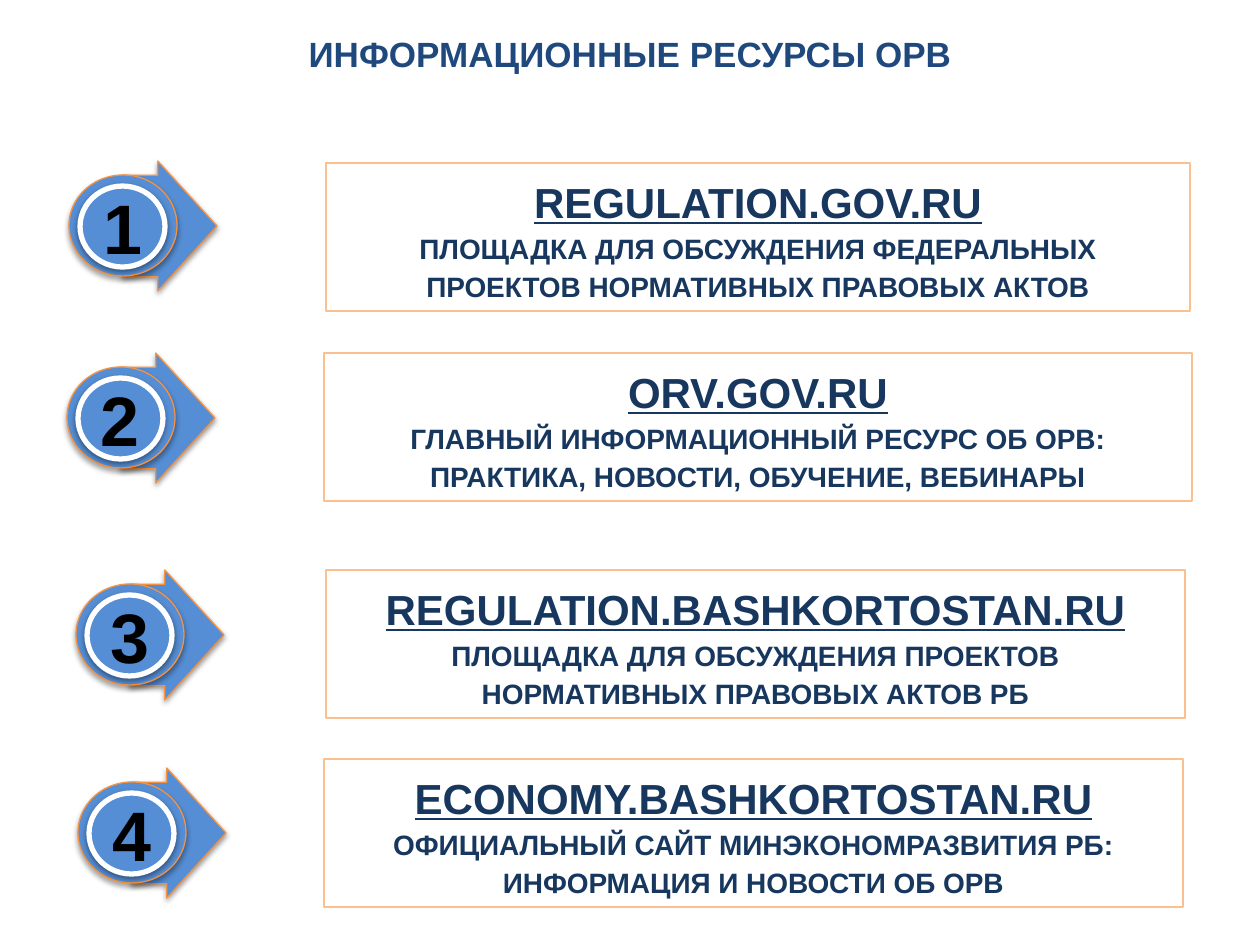
from lxml import etree
from pptx import Presentation
from pptx.dml.color import RGBColor
from pptx.enum.shapes import MSO_SHAPE
from pptx.enum.text import MSO_ANCHOR, MSO_AUTO_SIZE, PP_ALIGN
from pptx.oxml.ns import qn
from pptx.util import Pt

PX = 914400 / 126
ARROW = MSO_SHAPE.RIGHT_ARROW
CIRCLE = MSO_SHAPE.FLOWCHART_CONNECTOR
RECTANGLE = MSO_SHAPE.RECTANGLE
CENTER = PP_ALIGN.CENTER
BLUE, ORANGE, PEACH, WHITE, NAVY = "558ED5", "F69240", "FAC090", "FFFFFF", "17375E"


def color(value):
    return RGBColor.from_string(value)


def add_badge_part(group, kind, box, line_color, line_width, alpha, distance):
    shape = group.shapes.add_shape(kind, *(round(v * PX) for v in box))
    shape.fill.solid()
    shape.fill.fore_color.rgb = color(BLUE)
    shape.line.color.rgb = color(line_color)
    shape.line.width = Pt(line_width)
    # Soft shadow falling straight down
    effects = etree.SubElement(shape._element.spPr, qn("a:effectLst"))
    shadow = etree.SubElement(effects, qn("a:outerShdw"), blurRad=str(Pt(3.1)),
                              dist=str(Pt(distance)), dir="5400000", rotWithShape="0")
    black = etree.SubElement(shadow, qn("a:srgbClr"), val="000000")
    etree.SubElement(black, qn("a:alpha"), val=str(alpha * 1000))
    return shape


presentation = Presentation()
presentation.slide_width = round(1260 * PX)
presentation.slide_height = round(945 * PX)
slide = presentation.slides.add_slide(presentation.slide_layouts[6])

# Title
title = slide.shapes.add_textbox(0, round(26 * PX), round(1260 * PX), round(55 * PX))
title.text_frame.word_wrap = True
paragraph = title.text_frame.paragraphs[0]
paragraph.text = "ИНФОРМАЦИОННЫЕ РЕСУРСЫ ОРВ"
paragraph.alignment = CENTER
paragraph.font.name = "Arial"
paragraph.font.size = Pt(20)
paragraph.font.bold = True
paragraph.font.color.rgb = color("1F497D")

# Badge left and top, card left, top and width, site, description
resources = [
    (69, 161, 326, 163, 864, "REGULATION.GOV.RU",
     "ПЛОЩАДКА ДЛЯ ОБСУЖДЕНИЯ ФЕДЕРАЛЬНЫХ ПРОЕКТОВ НОРМАТИВНЫХ ПРАВОВЫХ АКТОВ"),
    (67, 353, 324, 353, 868, "ORV.GOV.RU",
     "ГЛАВНЫЙ ИНФОРМАЦИОННЫЙ РЕСУРС ОБ ОРВ: ПРАКТИКА, НОВОСТИ, ОБУЧЕНИЕ, ВЕБИНАРЫ"),
    (76, 570, 326, 570, 859, "REGULATION.BASHKORTOSTAN.RU",
     "ПЛОЩАДКА ДЛЯ ОБСУЖДЕНИЯ ПРОЕКТОВ НОРМАТИВНЫХ ПРАВОВЫХ АКТОВ РБ"),
    (78, 768, 324, 759, 859, "ECONOMY.BASHKORTOSTAN.RU",
     "ОФИЦИАЛЬНЫЙ САЙТ МИНЭКОНОМРАЗВИТИЯ РБ: ИНФОРМАЦИЯ И НОВОСТИ ОБ ОРВ"),
]

for number, (left, top, card_left, card_top, card_width, site, description) in enumerate(resources, 1):
    # Numbered badge: arrow, disc, ring
    badge = slide.shapes.add_group_shape()
    arrow = add_badge_part(badge, ARROW, (left + 54, top, 94, 130), ORANGE, 0.75, 38, 1.6)
    arrow.adjustments[0] = 0.78
    arrow.adjustments[1] = 0.63
    add_badge_part(badge, CIRCLE, (left, top + 14, 108, 101), ORANGE, 0.75, 35, 1.8)
    ring = add_badge_part(badge, CIRCLE, (left + 11, top + 25, 85, 81), WHITE, 3, 38, 1.6)
    frame = ring.text_frame
    frame.margin_left = frame.margin_right = frame.margin_top = frame.margin_bottom = 0
    frame.word_wrap = False
    frame.vertical_anchor = MSO_ANCHOR.MIDDLE
    paragraph = frame.paragraphs[0]
    paragraph.text = str(number)
    paragraph.alignment = CENTER
    paragraph.font.name = "Arial"
    paragraph.font.size = Pt(40)
    paragraph.font.bold = True
    paragraph.font.color.rgb = color("000000")

    # Resource card
    card = slide.shapes.add_shape(RECTANGLE, *(round(v * PX) for v in (card_left, card_top, card_width, 148)))
    card.shadow.inherit = False
    card.fill.background()
    card.line.color.rgb = color(PEACH)
    card.line.width = Pt(0.75)
    frame = card.text_frame
    frame.word_wrap = True
    frame.auto_size = MSO_AUTO_SIZE.SHAPE_TO_FIT_TEXT
    frame.vertical_anchor = MSO_ANCHOR.TOP
    for index, (text, size) in enumerate([(site, 24), (description, 16)]):
        paragraph = frame.add_paragraph() if index else frame.paragraphs[0]
        paragraph.text = text
        paragraph.alignment = CENTER
        paragraph.line_spacing = 1.14
        paragraph.font.name = "Arial"
        paragraph.font.size = Pt(size)
        paragraph.font.bold = True
        paragraph.font.underline = index == 0
        paragraph.font.color.rgb = color(NAVY)

presentation.save("out.pptx")
